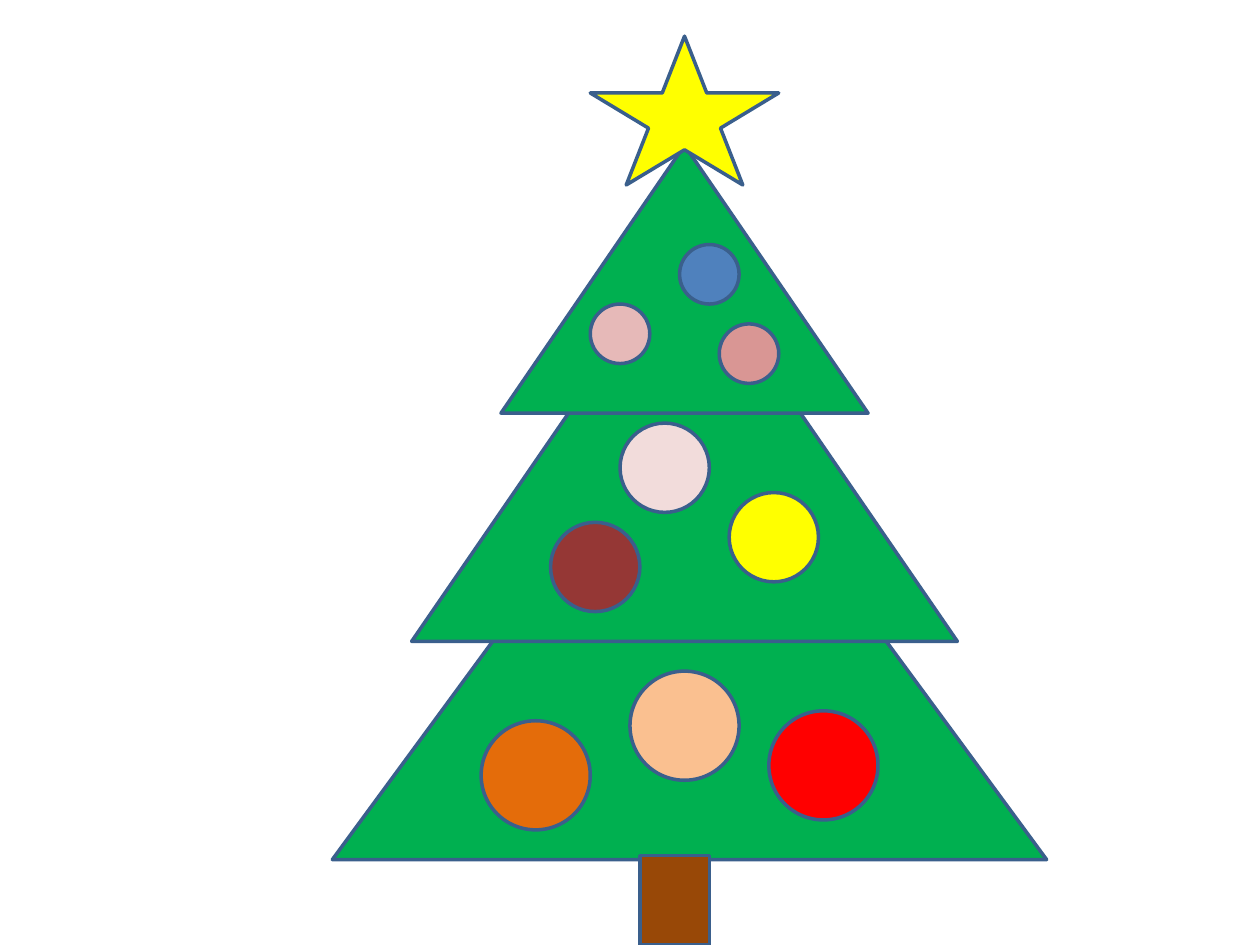
from dataclasses import dataclass

from pptx import Presentation
from pptx.dml.color import RGBColor
from pptx.enum.shapes import MSO_SHAPE as Preset
from pptx.slide import Slide
from pptx.util import Cm, Inches, Pt


@dataclass(frozen=True)
class Theme:
    outline: str = "3A5F8C"
    outline_width: float = 2
    needles: str = "00B050"
    bark: str = "984807"
    yellow: str = "FFFF00"
    red: str = "FF0000"
    blue: str = "4F81BD"
    maroon: str = "953735"
    peach: str = "FAC090"
    orange: str = "E46C0A"
    blush: str = "F2DCDB"
    pink: str = "E6B9B8"
    rose: str = "D99694"


@dataclass(frozen=True)
class Grid:
    cell: int = Cm(0.2)
    first_column: float = 0.5
    first_row: float = 0.65

    def left(self, column: float) -> int:
        return round((column + self.first_column) * self.cell)

    def top(self, row: float) -> int:
        return round((row + self.first_row) * self.cell)

    def length(self, cells: float) -> int:
        return round(cells * self.cell)


@dataclass(frozen=True)
class Piece:
    preset: Preset
    column: float
    row: float
    columns: float
    rows: float
    color: str


THEME = Theme()
GRID = Grid()
SMALL, MEDIUM, LARGE = 6, 9, 11


def bauble(column: float, row: float, size: float, color: str) -> Piece:
    return Piece(Preset.OVAL, column, row, size, size, color)


def tier(column: float, row: float, columns: float, rows: float) -> Piece:
    return Piece(Preset.ISOSCELES_TRIANGLE, column, row, columns, rows, THEME.needles)


TREE = [
    tier(33, 37, 72, 49),
    tier(41, 24, 55, 40),
    tier(50, 14, 37, 27),
    Piece(Preset.STAR_5_POINT, 59, 3, 19, 15, THEME.yellow),
    Piece(Preset.RECTANGLE, 64, 85.6, 7, 9, THEME.bark),
]

BAUBLES = [
    bauble(77, 71, LARGE, THEME.red),
    bauble(73, 49, MEDIUM, THEME.yellow),
    bauble(59, 30, SMALL, THEME.pink),
    bauble(68, 24, SMALL, THEME.blue),
    bauble(55, 52, MEDIUM, THEME.maroon),
    bauble(63, 67, LARGE, THEME.peach),
    bauble(48, 72, LARGE, THEME.orange),
    bauble(62, 42, MEDIUM, THEME.blush),
    bauble(72, 32, SMALL, THEME.rose),
]


def draw(slide: Slide, piece: Piece) -> None:
    shape = slide.shapes.add_shape(
        piece.preset,
        GRID.left(piece.column),
        GRID.top(piece.row),
        GRID.length(piece.columns),
        GRID.length(piece.rows),
    )
    shape.shadow.inherit = False
    shape.fill.solid()
    shape.fill.fore_color.rgb = RGBColor.from_string(piece.color)
    shape.line.color.rgb = RGBColor.from_string(THEME.outline)
    shape.line.width = Pt(THEME.outline_width)


def main() -> None:
    deck = Presentation()
    deck.slide_width, deck.slide_height = Inches(10), Inches(7.5)
    slide = deck.slides.add_slide(deck.slide_layouts[6])
    for piece in TREE + BAUBLES:
        draw(slide, piece)
    deck.save("out.pptx")


if __name__ == "__main__":
    main()
